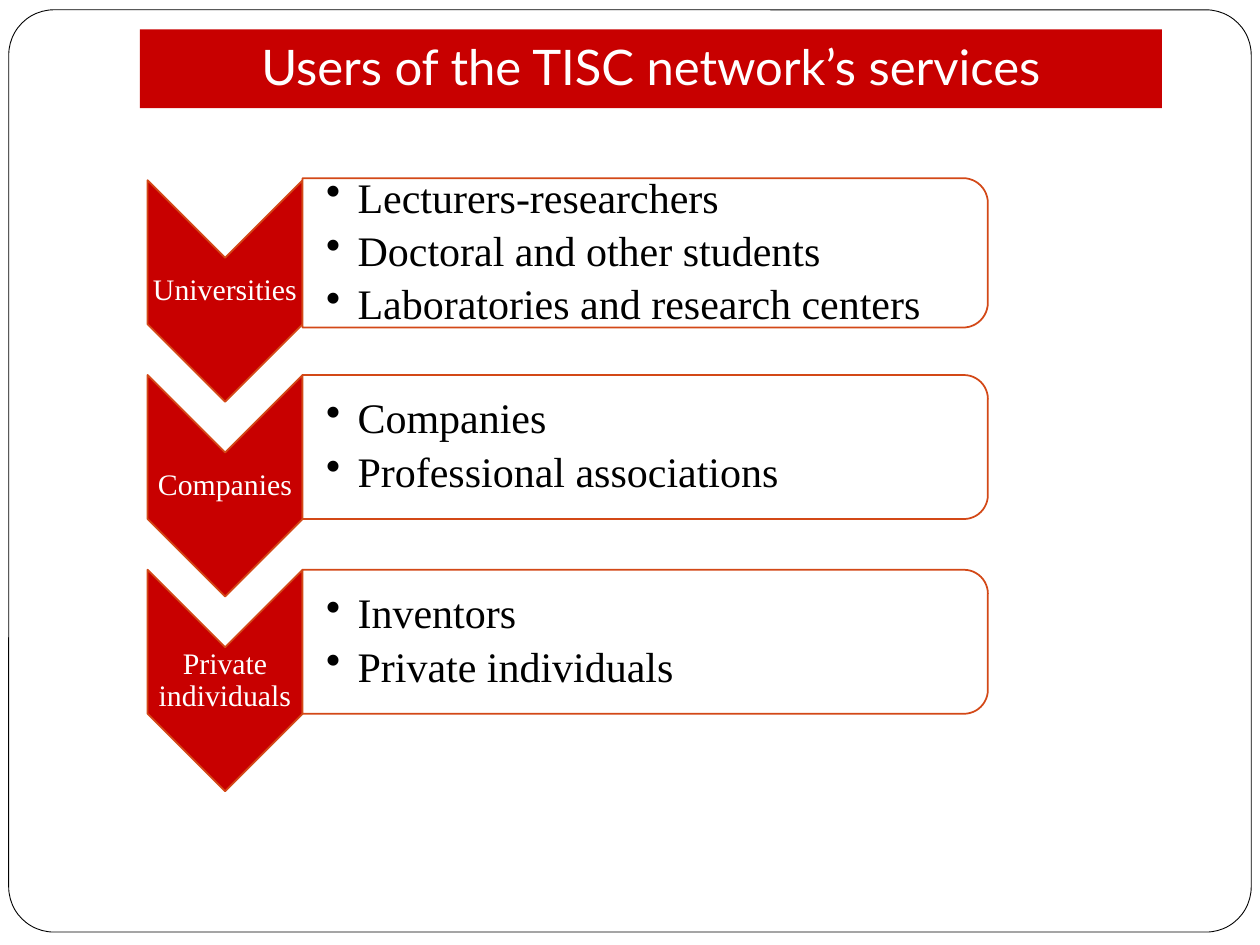
"""Build the slide on the users of the TISC network's services."""
from dataclasses import dataclass

from lxml.etree import SubElement
from pptx import Presentation
from pptx.dml.color import RGBColor
from pptx.enum.shapes import MSO_SHAPE as Shape
from pptx.enum.text import MSO_ANCHOR as Anchor, PP_ALIGN as Align
from pptx.oxml.ns import qn
from pptx.util import Pt

COLORS = {"white": "FFFFFF", "black": "000000", "red": "C80000", "orange": "D34817"}
SERIF = "Times New Roman"
CHEVRON_W, CHEVRON_H = 88.6, 126.6
CHEVRON_LEFT, FIRST_TOP, STEP = 84.3, 103, 111.3
PANEL_LEFT, PANEL_W = 172.9, 391.6
TEXT_W = 387.4


@dataclass
class UserGroup:
    name: str
    members: list[str]
    panel_top: float
    panel_h: float


GROUPS = [
    UserGroup("Universities", ["Lecturers-researchers", "Doctoral and other students",
                               "Laboratories and research centers"], 101.8, 85.4),
    UserGroup("Companies", ["Companies", "Professional associations"],
              FIRST_TOP + STEP, 82.3),
    UserGroup("Private individuals", ["Inventors", "Private individuals"],
              FIRST_TOP + 2 * STEP, 82.3),
]


def rgb(name: str) -> RGBColor:
    return RGBColor.from_string(COLORS[name])


def add_box(s, kind, x: float, y: float, w: float, h: float, fill: str,
            line: str | None = None, weight: float = 1, turned: bool = False):
    """Draw a preset shape in its visible bounds, turned a quarter if asked."""
    if turned:
        x, y, w, h = x + (w - h) / 2, y + (h - w) / 2, h, w
    sp = s.shapes.add_shape(kind, Pt(x), Pt(y), Pt(w), Pt(h))
    sp.shadow.inherit = False
    sp.rotation = 90 if turned else 0
    sp.fill.solid()
    sp.fill.fore_color.rgb = rgb(fill)
    if line:
        sp.line.color.rgb = rgb(line)
        sp.line.width = Pt(weight)
    else:
        sp.line.fill.background()
    return sp


def set_text(sp, lines: list[str], font: str, size: float, color: str,
             insets: tuple[float, float, float, float], align=Align.CENTER,
             anchor=Anchor.MIDDLE, spacing: float = 1, after: float = 0) -> None:
    """Fill a shape with one formatted paragraph per line."""
    tf = sp.text_frame
    tf.word_wrap = True
    tf.vertical_anchor = anchor
    tf.margin_left, tf.margin_top, tf.margin_right, tf.margin_bottom = map(Pt, insets)
    tf.text = "\n".join(lines)
    for p in tf.paragraphs:
        p.alignment, p.line_spacing, p.space_after = align, spacing, Pt(after)
        for r in p.runs:
            r.font.name, r.font.size = font, Pt(size)
            r.font.color.rgb = rgb(color)


def add_bullets(sp, indent: float) -> None:
    """Give every paragraph a hanging bullet."""
    for p in sp.text_frame.paragraphs:
        pPr = p._p.get_or_add_pPr()
        pPr.set("marL", str(Pt(indent)))
        pPr.set("indent", str(-Pt(indent)))
        SubElement(pPr, qn("a:buChar")).set("char", "•")


def add_group(s, group: UserGroup, top: float) -> None:
    """Draw a named chevron and the panel listing its members."""
    add_box(s, Shape.CHEVRON, CHEVRON_LEFT, top, CHEVRON_W, CHEVRON_H,
            "red", "orange", turned=True)
    label = s.shapes.add_textbox(Pt(CHEVRON_LEFT), Pt(top + CHEVRON_W / 2),
                                 Pt(CHEVRON_W), Pt(CHEVRON_H - CHEVRON_W))
    set_text(label, [group.name], SERIF, 17, "white", (0.8, 0.8, 0.8, 0.8), spacing=0.9)
    add_box(s, Shape.ROUND_2_SAME_RECTANGLE, PANEL_LEFT, group.panel_top, PANEL_W,
            group.panel_h, "white", "orange", turned=True)
    text_h = group.panel_h - 8.2
    members = s.shapes.add_textbox(Pt(PANEL_LEFT), Pt(group.panel_top + 4.1),
                                   Pt(TEXT_W), Pt(text_h))
    set_text(members, group.members, SERIF, 24, "black", (13.4, 1.2, 1.2, 1.2),
             Align.LEFT, spacing=0.9, after=4.6)
    add_bullets(members, 18)


def main() -> None:
    prs = Presentation()
    prs.slide_width, prs.slide_height = Pt(720), Pt(540)
    s = prs.slides.add_slide(prs.slide_layouts[6])
    frame = add_box(s, Shape.ROUNDED_RECTANGLE, 5, 5.6, 710, 527, "white", "black", 0.5)
    frame.adjustments[0] = 0.049
    title = add_box(s, Shape.RECTANGLE, 80, 16.8, 584, 45, "red")
    set_text(title, ["Users of the TISC network’s services"], "Lato", 28, "white",
             (7.2, 3.6, 7.2, 7.2), anchor=Anchor.BOTTOM)
    for i, group in enumerate(GROUPS):
        add_group(s, group, FIRST_TOP + i * STEP)
    prs.save("out.pptx")


if __name__ == "__main__":
    main()
